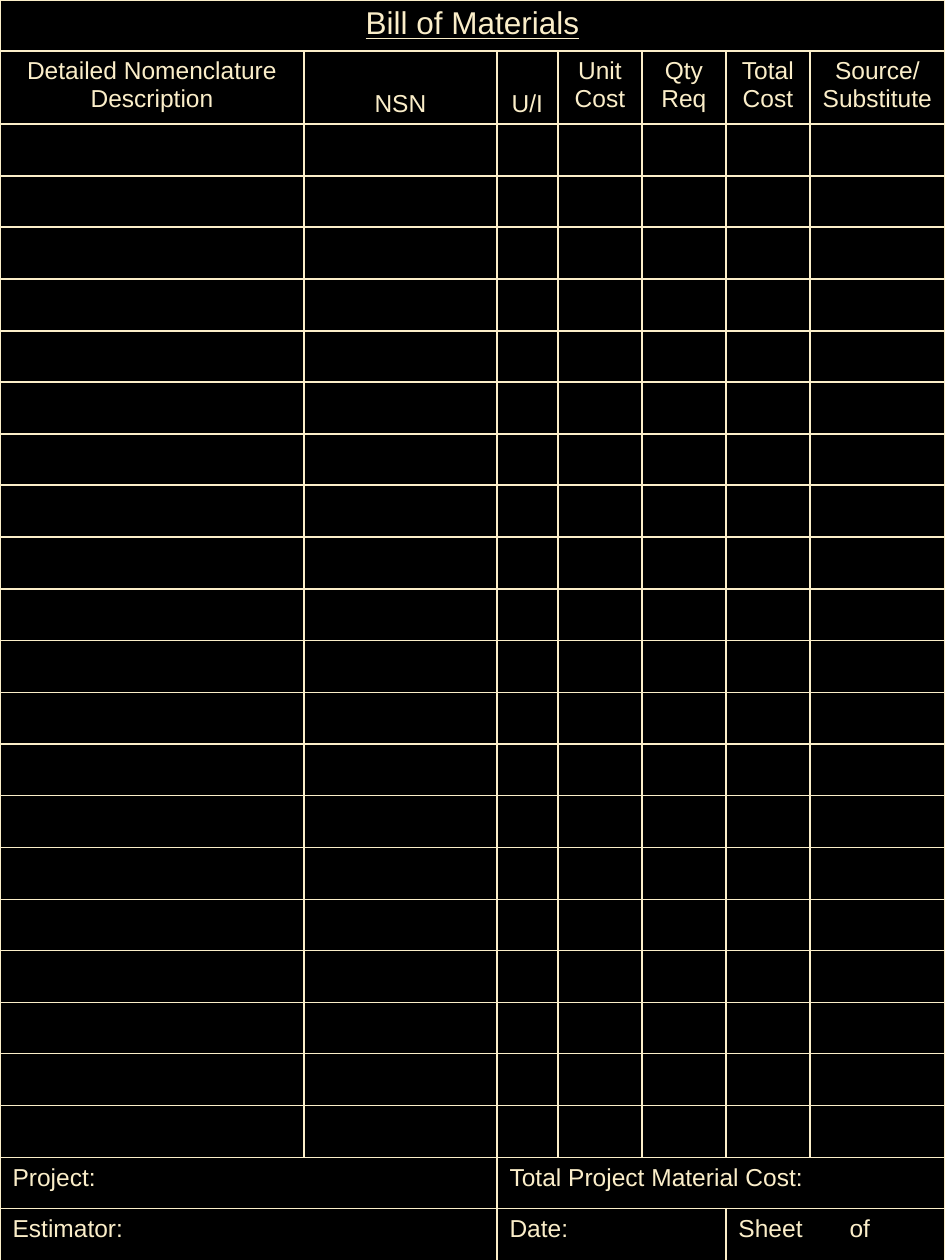
"""Build a blank Bill of Materials form as one table on a portrait slide."""
import itertools

import pptx
import pptx.dml.color
import pptx.enum.text
import pptx.oxml
import pptx.oxml.ns
import pptx.util

PIXELS_PER_INCH = 126
SLIDE_WIDTH, SLIDE_HEIGHT = 945, 1260
COLUMN_WIDTHS = [304, 193, 61, 84, 84, 84, 135]
TITLE_HEIGHT, HEADER_HEIGHT = 51, 73
ITEM_ROWS, FOOTER_ROWS = 20, 2
SHEET_TAB = 111

BLACK = pptx.dml.color.RGBColor(0x00, 0x00, 0x00)
CREAM = pptx.dml.color.RGBColor(0xFB, 0xEE, 0xC9)

CENTER = pptx.enum.text.PP_ALIGN.CENTER
LEFT = pptx.enum.text.PP_ALIGN.LEFT
TOP = pptx.enum.text.MSO_ANCHOR.TOP
BOTTOM = pptx.enum.text.MSO_ANCHOR.BOTTOM

TITLE_FONT = {"name": "Arial", "size": pptx.util.Pt(18), "underline": True}
LABEL_FONT = {"name": "Arial", "size": pptx.util.Pt(14), "underline": False}

HEADERS = [
    ("Detailed Nomenclature Description", TOP),
    ("NSN", BOTTOM),
    ("U/I", BOTTOM),
    ("Unit Cost", TOP),
    ("Qty Req", TOP),
    ("Total Cost", TOP),
    ("Source/ Substitute", TOP),
]
FOOTERS = [
    [(0, 1, "Project:"), (2, 6, "Total Project Material Cost:")],
    [(0, 1, "Estimator:"), (2, 4, "Date:"), (5, 6, "Sheet\tof")],
]


def px(length):
    """Turn a length in pixels into EMU."""
    return pptx.util.Emu(round(length * 914400 / PIXELS_PER_INCH))


def append_xml(parent, xml):
    """Append a DrawingML fragment to a parent element."""
    namespace = pptx.oxml.ns.nsdecls("a")
    parent.append(pptx.oxml.parse_xml(xml.replace(" ", f" {namespace} ", 1)))


def row_heights():
    """Return heights that share the space below the header evenly."""
    start = TITLE_HEIGHT + HEADER_HEIGHT
    count = ITEM_ROWS + FOOTER_ROWS
    edges = [round(start + (SLIDE_HEIGHT - start) * i / count) for i in range(count + 1)]
    return [TITLE_HEIGHT, HEADER_HEIGHT] + [b - a for a, b in itertools.pairwise(edges)]


def style_cell(cell):
    """Give a cell cream borders and a black fill."""
    properties = cell._tc.get_or_add_tcPr()
    for side in ("lnL", "lnR", "lnT", "lnB"):
        append_xml(
            properties,
            f'<a:{side} w="12700"><a:solidFill><a:srgbClr val="{CREAM}"/>'
            f"</a:solidFill></a:{side}>",
        )
    cell.fill.solid()
    cell.fill.fore_color.rgb = BLACK


def write_cell(cell, text, font_values, alignment=LEFT, anchor=TOP):
    """Write one formatted paragraph into a cell."""
    cell.vertical_anchor = anchor
    paragraph = cell.text_frame.paragraphs[0]
    paragraph.alignment = alignment
    properties = paragraph._p.get_or_add_pPr()
    append_xml(properties, '<a:spcBef ><a:spcPct val="20000"/></a:spcBef>')
    if "\t" in text:
        append_xml(
            properties,
            f'<a:tabLst ><a:tab pos="{px(SHEET_TAB)}" algn="l"/></a:tabLst>',
        )
    run = paragraph.add_run()
    run.text = text
    for name, value in font_values.items():
        setattr(run.font, name, value)
    run.font.color.rgb = CREAM


def add_form_table(slide):
    """Add the empty bordered grid that fills the slide."""
    heights = row_heights()
    table = slide.shapes.add_table(
        len(heights), len(COLUMN_WIDTHS), 0, 0, px(SLIDE_WIDTH), px(SLIDE_HEIGHT)
    ).table
    table.first_row = table.horz_banding = False
    for column, width in zip(table.columns, COLUMN_WIDTHS):
        column.width = px(width)
    for row, height in zip(table.rows, heights):
        row.height = px(height)
    for cell in table.iter_cells():
        style_cell(cell)
    return table


def fill_headings(table):
    """Write the merged title row and the column headers."""
    title = table.cell(0, 0)
    title.merge(table.cell(0, len(COLUMN_WIDTHS) - 1))
    write_cell(title, "Bill of Materials", TITLE_FONT, CENTER)
    for column, (text, anchor) in enumerate(HEADERS):
        write_cell(table.cell(1, column), text, LABEL_FONT, CENTER, anchor)


def fill_footers(table):
    """Merge and label the project rows at the foot of the form."""
    for row, fields in enumerate(FOOTERS, start=2 + ITEM_ROWS):
        for first, last, text in fields:
            cell = table.cell(row, first)
            cell.merge(table.cell(row, last))
            write_cell(cell, text, LABEL_FONT)


def main():
    """Create and save the form."""
    presentation = pptx.Presentation()
    presentation.slide_width = px(SLIDE_WIDTH)
    presentation.slide_height = px(SLIDE_HEIGHT)
    slide = presentation.slides.add_slide(presentation.slide_layouts[6])
    table = add_form_table(slide)
    fill_headings(table)
    fill_footers(table)
    presentation.save("out.pptx")


if __name__ == "__main__":
    main()
